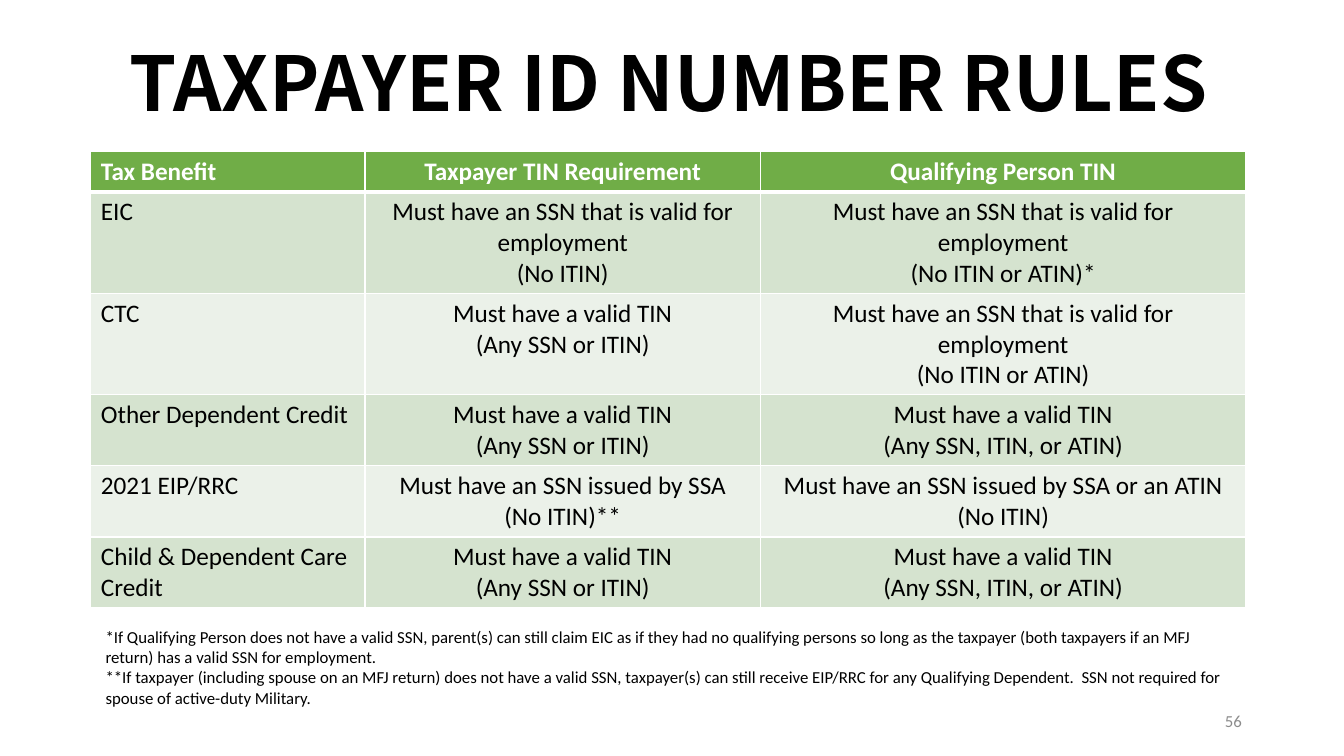
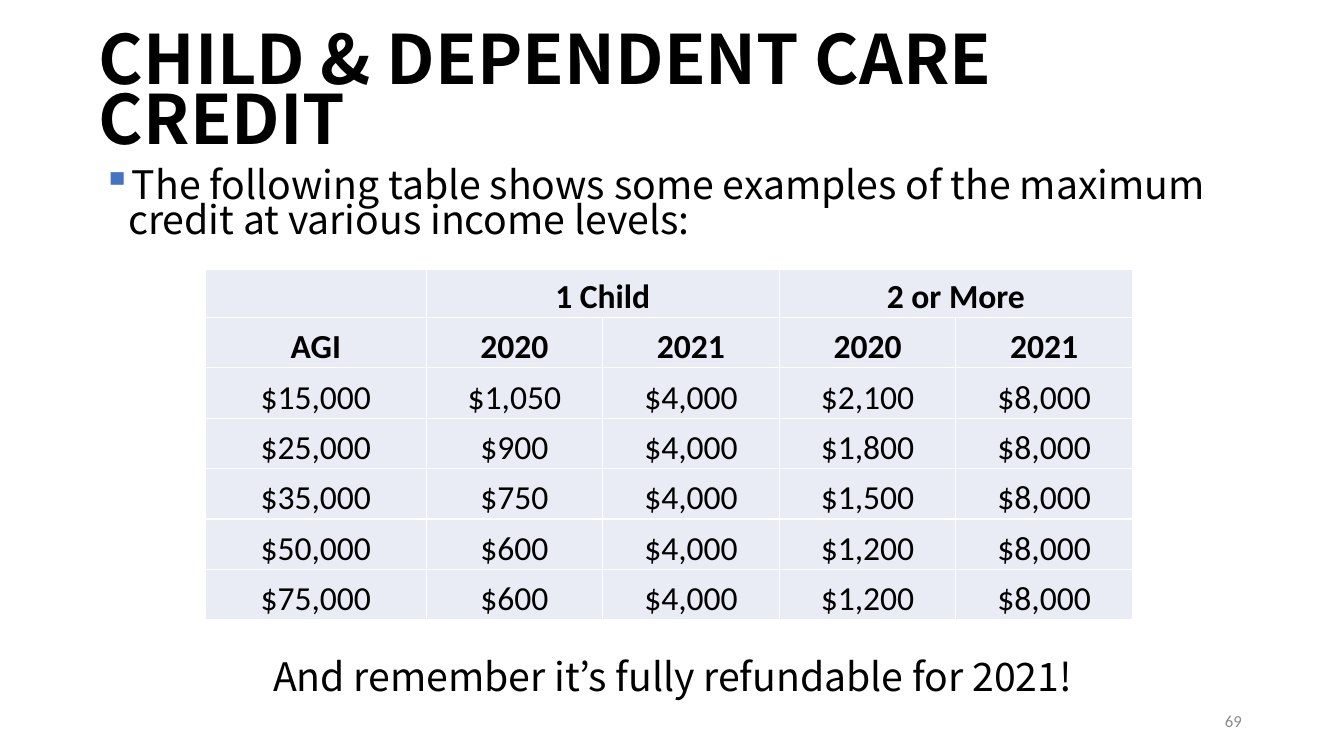
from dataclasses import dataclass

from lxml import etree
from pptx import Presentation
from pptx import util as u
from pptx.dml.color import RGBColor
from pptx.enum import text
from pptx.oxml import ns

LEFT, CENTER, RIGHT = text.PP_ALIGN.LEFT, text.PP_ALIGN.CENTER, text.PP_ALIGN.RIGHT
TOP, MIDDLE, BOTTOM = (text.MSO_ANCHOR.TOP, text.MSO_ANCHOR.MIDDLE,
                       text.MSO_ANCHOR.BOTTOM)


@dataclass(frozen=True)
class Theme:
    heading_font: str = "Noto Sans CJK JP"
    table_font: str = "Calibri"
    ink: str = "000000"
    white: str = "FFFFFF"
    muted: str = "8C8C8C"
    bullet: str = "4472C4"
    header_green: str = "70AD47"
    green_bands: tuple = ("D5E3CF", "EBF1E9")
    pale_blue: str = "E9EBF5"
    title_size: float = 54
    long_title_size: float = 48.6
    body_size: float = 28
    credit_size: float = 24
    rules_size: float = 18
    small_size: float = 12
    title_spacing: float = 0.9
    tight_spacing: float = 0.74


THEME = Theme()

# Content: a line break inside a cell starts a new paragraph
RULES_TITLE = "TAXPAYER ID NUMBER RULES"
SSN_FOR_WORK = "Must have an SSN that is valid for employment"
VALID_TIN = "Must have a valid TIN\n(Any SSN or ITIN)"
VALID_TIN_OR_ATIN = "Must have a valid TIN\n(Any SSN, ITIN, or ATIN)"
RULES = [
    ("Tax Benefit", "Taxpayer TIN Requirement", "Qualifying Person TIN"),
    ("EIC", SSN_FOR_WORK + "\n(No ITIN)", SSN_FOR_WORK + "\n(No ITIN or ATIN)*"),
    ("CTC", VALID_TIN, SSN_FOR_WORK + "\n(No ITIN or ATIN)"),
    ("Other Dependent Credit", VALID_TIN, VALID_TIN_OR_ATIN),
    ("2021 EIP/RRC", "Must have an SSN issued by SSA\n(No ITIN)**",
     "Must have an SSN issued by SSA or an ATIN\n(No ITIN)"),
    ("Child & Dependent Care Credit", VALID_TIN, VALID_TIN_OR_ATIN),
]
RULES_LINES = [1, 3, 3, 2, 2, 2]
FOOTNOTES = (
    "*If Qualifying Person does not have a valid SSN, parent(s) can still claim EIC "
    "as if they had no qualifying persons so long as the taxpayer (both taxpayers if "
    "an MFJ return) has a valid SSN for employment.\n"
    "**If taxpayer (including spouse on an MFJ return) does not have a valid SSN, "
    "taxpayer(s) can still receive EIP/RRC for any Qualifying Dependent.  SSN not "
    "required for spouse of active-duty Military."
)

CREDIT_TITLE = "CHILD & DEPENDENT CARE CREDIT"
CREDIT_INTRO = ("The following table shows some examples of the maximum credit "
                "at various income levels:")
CREDIT_CLOSING = "And remember it’s fully refundable for 2021!"
CREDITS = [
    ("", "1 Child", "", "2 or More", ""),
    ("AGI", "2020", "2021", "2020", "2021"),
    ("$15,000", "$1,050", "$4,000", "$2,100", "$8,000"),
    ("$25,000", "$900", "$4,000", "$1,800", "$8,000"),
    ("$35,000", "$750", "$4,000", "$1,500", "$8,000"),
    ("$50,000", "$600", "$4,000", "$1,200", "$8,000"),
    ("$75,000", "$600", "$4,000", "$1,200", "$8,000"),
]


def write_text(frame, content, size, font=THEME.table_font, color=THEME.ink,
               bold=False, align=LEFT, spacing=None):
    """Fill a text frame, one paragraph per line of content."""
    for index, line in enumerate(content.split("\n")):
        paragraph = frame.add_paragraph() if index else frame.paragraphs[0]
        paragraph.alignment = align
        if spacing:
            paragraph.line_spacing = spacing
        run = paragraph.add_run()
        run.text = line
        run.font.size, run.font.name, run.font.bold = u.Pt(size), font, bold
        run.font.color.rgb = RGBColor.from_string(color)


def add_text(slide, box, content, anchor=TOP, **style):
    shape = slide.shapes.add_textbox(*map(u.Cm, box))
    shape.text_frame.word_wrap = True
    shape.text_frame.vertical_anchor = anchor
    write_text(shape.text_frame, content, **style)
    return shape


def add_bullet(paragraph, indent):
    properties = paragraph._p.get_or_add_pPr()
    properties.set("marL", str(indent))
    properties.set("indent", str(-indent))
    color = etree.SubElement(properties, ns.qn("a:buClr"))
    etree.SubElement(color, ns.qn("a:srgbClr"), val=THEME.bullet)
    etree.SubElement(properties, ns.qn("a:buChar"), char="▪")


def add_borders(cell, bottom=1):
    properties = cell._tc.get_or_add_tcPr()
    for side, width in (("L", 1), ("R", 1), ("T", 1), ("B", bottom)):
        line = etree.SubElement(properties, ns.qn("a:ln" + side), w=str(u.Pt(width)))
        fill = etree.SubElement(line, ns.qn("a:solidFill"))
        etree.SubElement(fill, ns.qn("a:srgbClr"), val=THEME.white)


def add_table(slide, left, top, widths, heights, rows, fill_for, style_for,
              anchor=TOP, margins=None, header_rule=1):
    frame = slide.shapes.add_table(len(rows), len(widths), u.Cm(left), u.Cm(top),
                                   u.Cm(sum(widths)), u.Cm(sum(heights)))
    table = frame.table
    table.first_row = table.horz_banding = False
    for column, width in zip(table.columns, widths):
        column.width = u.Cm(width)
    for row, height in zip(table.rows, heights):
        row.height = u.Cm(height)
    for r, values in enumerate(rows):
        for c, value in enumerate(values):
            cell = table.cell(r, c)
            add_borders(cell, 1 if r else header_rule)
            cell.fill.solid()
            cell.fill.fore_color.rgb = RGBColor.from_string(fill_for(r))
            cell.vertical_anchor = anchor
            if margins:
                (cell.margin_left, cell.margin_top,
                 cell.margin_right, cell.margin_bottom) = map(u.Cm, margins)
            if value:
                write_text(cell.text_frame, value, **style_for(r, c))
    return table


def add_slide(presentation, title, number, height, **title_style):
    """Start a slide with its title and page number."""
    slide = presentation.slides.add_slide(presentation.slide_layouts[5])
    shape = slide.shapes.title
    shape.left, shape.top, shape.width, shape.height = map(
        u.Cm, (2.24, 0.33, 29.21, height))
    frame = shape.text_frame
    frame.word_wrap = True
    frame.auto_size = text.MSO_AUTO_SIZE.NONE
    frame.vertical_anchor = MIDDLE
    write_text(frame, title, font=THEME.heading_font, bold=True, **title_style)
    add_text(slide, (23.93, 17.65, 7.62, 1.02), str(number), anchor=MIDDLE,
             size=THEME.small_size, color=THEME.muted, align=RIGHT)
    return slide


def build_rules(presentation):
    slide = add_slide(presentation, RULES_TITLE, 56, 3.71, size=THEME.title_size,
                      align=CENTER, spacing=THEME.title_spacing)

    def fill_for(row):
        return THEME.green_bands[(row - 1) % 2] if row else THEME.header_green

    def style_for(row, column):
        return dict(size=THEME.rules_size, bold=row == 0,
                    color=THEME.ink if row else THEME.white,
                    align=CENTER if column else LEFT)

    # Row height follows the number of text lines
    heights = [0.25 + 0.77 * lines for lines in RULES_LINES]
    add_table(slide, 2.29, 3.81, [6.91, 9.96, 12.24], heights, RULES,
              fill_for, style_for, header_rule=3)
    add_text(slide, (2.41, 15.67, 28.88, 2.31), FOOTNOTES, size=THEME.small_size)


def build_credits(presentation):
    slide = add_slide(presentation, CREDIT_TITLE, 69, 4.19,
                      size=THEME.long_title_size, spacing=THEME.tight_spacing)
    body_style = dict(size=THEME.body_size, font=THEME.heading_font,
                      spacing=THEME.tight_spacing)
    intro = add_text(slide, (2.34, 4.2, 29.21, 2.3), CREDIT_INTRO, **body_style)
    add_bullet(intro.text_frame.paragraphs[0], u.Cm(0.64))

    def style_for(row, column):
        return dict(size=THEME.credit_size, bold=row < 2, align=CENTER)

    table = add_table(slide, 5.18, 6.78, [5.56] + [4.45] * 4, [1.22] + [1.27] * 6,
                      CREDITS, lambda row: THEME.pale_blue, style_for,
                      anchor=BOTTOM, margins=(0.03, 0.03, 0.03, 0))
    # Each family size spans its two years
    for column in (1, 3):
        table.cell(0, column).merge(table.cell(0, column + 1))
    add_text(slide, (2.34, 16.6, 29.21, 1.6), CREDIT_CLOSING, align=CENTER,
             **body_style)


def main():
    presentation = Presentation()
    presentation.slide_width, presentation.slide_height = u.Cm(33.87), u.Cm(19.05)
    build_rules(presentation)
    build_credits(presentation)
    presentation.save("out.pptx")


if __name__ == "__main__":
    main()
